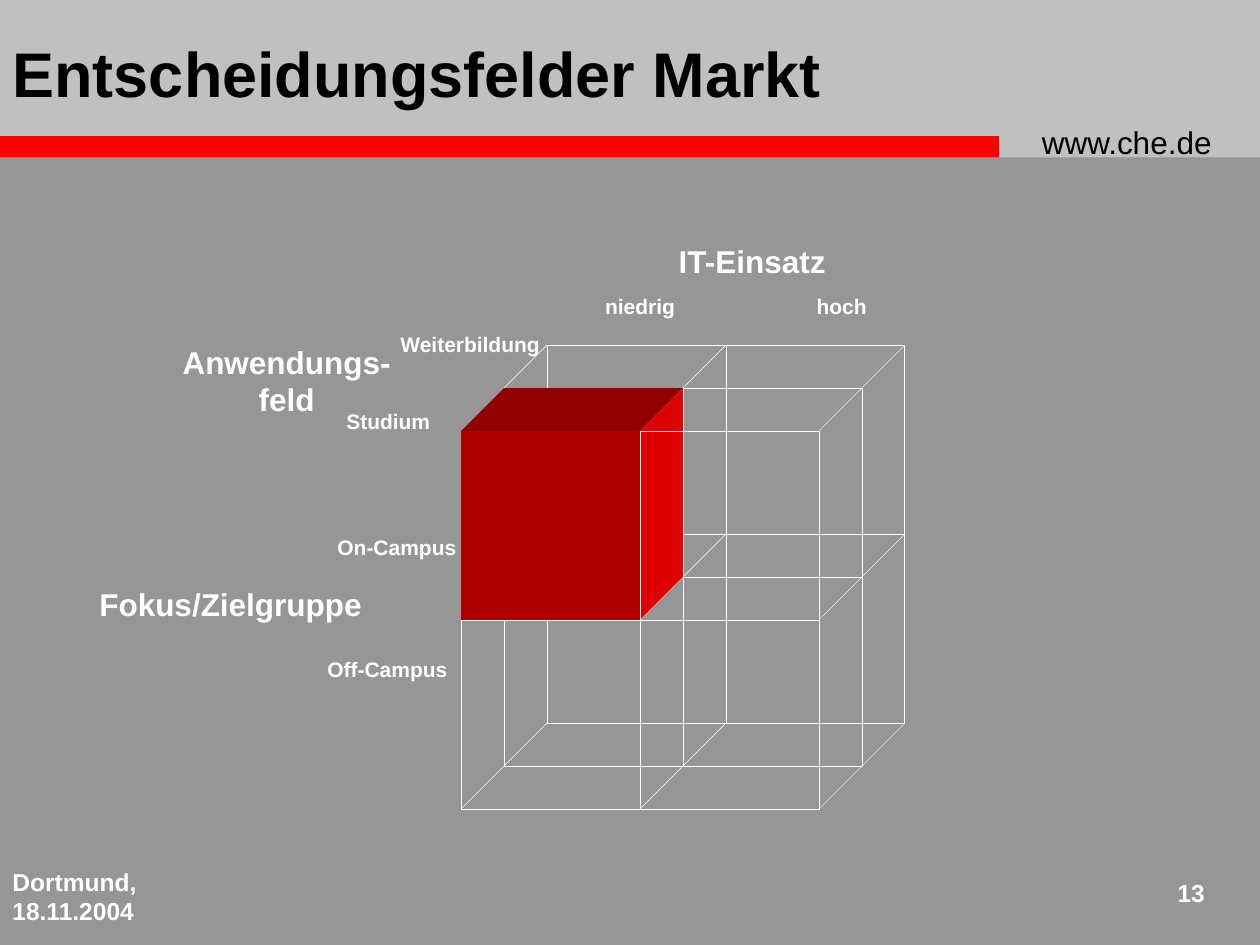
from itertools import product

from lxml.etree import SubElement
from pptx import Presentation
from pptx.dml.color import RGBColor
from pptx.enum.shapes import MSO_CONNECTOR, MSO_SHAPE
from pptx.enum.text import MSO_ANCHOR, PP_ALIGN
from pptx.oxml.ns import qn
from pptx.util import Inches, Pt

LEFT, CENTER, RIGHT = PP_ALIGN.LEFT, PP_ALIGN.CENTER, PP_ALIGN.RIGHT
CELL_WIDTH, CELL_HEIGHT, DEPTH = 1.42, 1.5, 0.34


def color(value):
    return RGBColor.from_string(value)


def corner(column, row, layer):
    return (3.66 + column * CELL_WIDTH + layer * DEPTH,
            3.42 + row * CELL_HEIGHT - layer * DEPTH)


class SlideBuilder:
    """Holds the style and the current slide and adds elements to it."""

    font = "Arial"
    white = "FFFFFF"
    line_width = 0.25

    def __init__(self, slide, background):
        self.slide = slide
        self.shapes = slide.shapes
        slide.background.fill.solid()
        slide.background.fill.fore_color.rgb = color(background)

    def paint(self, shape, fill=None, line=None):
        shape.shadow.inherit = False
        if fill:
            shape.fill.solid()
            shape.fill.fore_color.rgb = color(fill)
        else:
            shape.fill.background()
        if line:
            shape.line.color.rgb = color(line)
            shape.line.width = Pt(self.line_width)
        else:
            shape.line.fill.background()

    def rect(self, x, y, width, height, fill=None, line=None):
        shape = self.shapes.add_shape(MSO_SHAPE.RECTANGLE, Inches(x), Inches(y),
                                      Inches(width), Inches(height))
        self.paint(shape, fill, line)

    def face(self, points, fill):
        start, *rest = [(Inches(x), Inches(y)) for x, y in points]
        outline = self.shapes.build_freeform(*start)
        outline.add_line_segments(rest)
        self.paint(outline.convert_to_shape(), fill)

    def edge(self, start, end):
        edge = self.shapes.add_connector(MSO_CONNECTOR.STRAIGHT, *map(Inches, start + end))
        edge.line.color.rgb = color(self.white)
        edge.line.width = Pt(self.line_width)
        SubElement(edge._element.spPr, qn("a:effectLst"))

    def format(self, frame, size, text_color, bold, align):
        for paragraph in frame.paragraphs:
            paragraph.alignment = align
            for run in paragraph.runs:
                run.font.name = self.font
                run.font.size = Pt(size)
                run.font.bold = bold
                run.font.color.rgb = color(text_color)

    def text(self, words, x, y, width, height, size, align=LEFT,
             text_color=white, bold=True):
        box = self.shapes.add_textbox(Inches(x), Inches(y), Inches(width), Inches(height))
        box.text_frame.word_wrap = True
        box.text_frame.text = words
        self.format(box.text_frame, size, text_color, bold, align)

    def title(self, words, x, y, width, height):
        title = self.shapes.title
        title.left, title.top, title.width, title.height = map(Inches, (x, y, width, height))
        title.text_frame.text = words
        title.text_frame.vertical_anchor = MSO_ANCHOR.TOP
        self.format(title.text_frame, 36, "000000", True, LEFT)
        self.shapes.element.append(title.element)

    def frame(self, column, row, layer):
        self.rect(*corner(column, row, layer), CELL_WIDTH, CELL_HEIGHT, line=self.white)

    def cube(self):
        for layer, row, column in product((2, 1), (1, 0), (0, 1)):
            self.frame(column, row, layer)
        for column, row in product(range(3), repeat=2):
            self.edge(corner(column, row, 0), corner(column, row, 2))
        self.rect(*corner(0, 0, 0), CELL_WIDTH, CELL_HEIGHT, fill="B00000")
        self.face([corner(0, 0, 0), corner(0, 0, 1), corner(1, 0, 1), corner(1, 0, 0)], "900000")
        self.face([corner(1, 0, 0), corner(1, 0, 1), corner(1, 1, 1), corner(1, 1, 0)], "DD0000")
        for column, row in ((0, 1), (1, 1), (1, 0)):
            self.frame(column, row, 0)


def main():
    presentation = Presentation()
    presentation.slide_width, presentation.slide_height = Inches(10), Inches(7.5)
    builder = SlideBuilder(presentation.slides.add_slide(presentation.slide_layouts[5]), "969696")

    builder.rect(0, 0, 10, 1.25, fill="C0C0C0")
    builder.rect(0, 1.08, 7.93, 0.17, fill="FF0000")
    builder.text("www.che.de", 8.17, 0.93, 1.75, 0.4, 18, text_color="000000", bold=False)
    builder.text("Dortmund, 18.11.2004", 0, 6.83, 2.08, 0.5, 14)
    builder.text("13", 9.08, 6.92, 0.58, 0.42, 14, RIGHT)

    builder.cube()

    axes = [
        ("Fokus/Zielgruppe", 0.65, 4.59, 2.32, 0.4, RIGHT),
        ("Anwendungs-\nfeld", 1.33, 2.67, 1.89, 0.7, CENTER),
        ("IT-Einsatz", 5.27, 1.87, 1.4, 0.4, CENTER),
    ]
    for words, x, y, width, height, align in axes:
        builder.text(words, x, y, width, height, 18, align)

    levels = [
        ("On-Campus", 2.58, 4.19, 1.2, LEFT),
        ("Off-Campus", 2.5, 5.16, 1.2, LEFT),
        ("niedrig", 4.68, 2.28, 0.8, CENTER),
        ("hoch", 6.36, 2.28, 0.64, CENTER),
        ("Studium", 2.65, 3.19, 0.92, LEFT),
        ("Weiterbildung", 3.08, 2.58, 1.36, LEFT),
    ]
    for words, x, y, width, align in levels:
        builder.text(words, x, y, width, 0.3, 12, align)

    builder.title("Entscheidungsfelder Markt", 0, 0.22, 9.57, 0.7)
    presentation.save("out.pptx")


if __name__ == "__main__":
    main()
